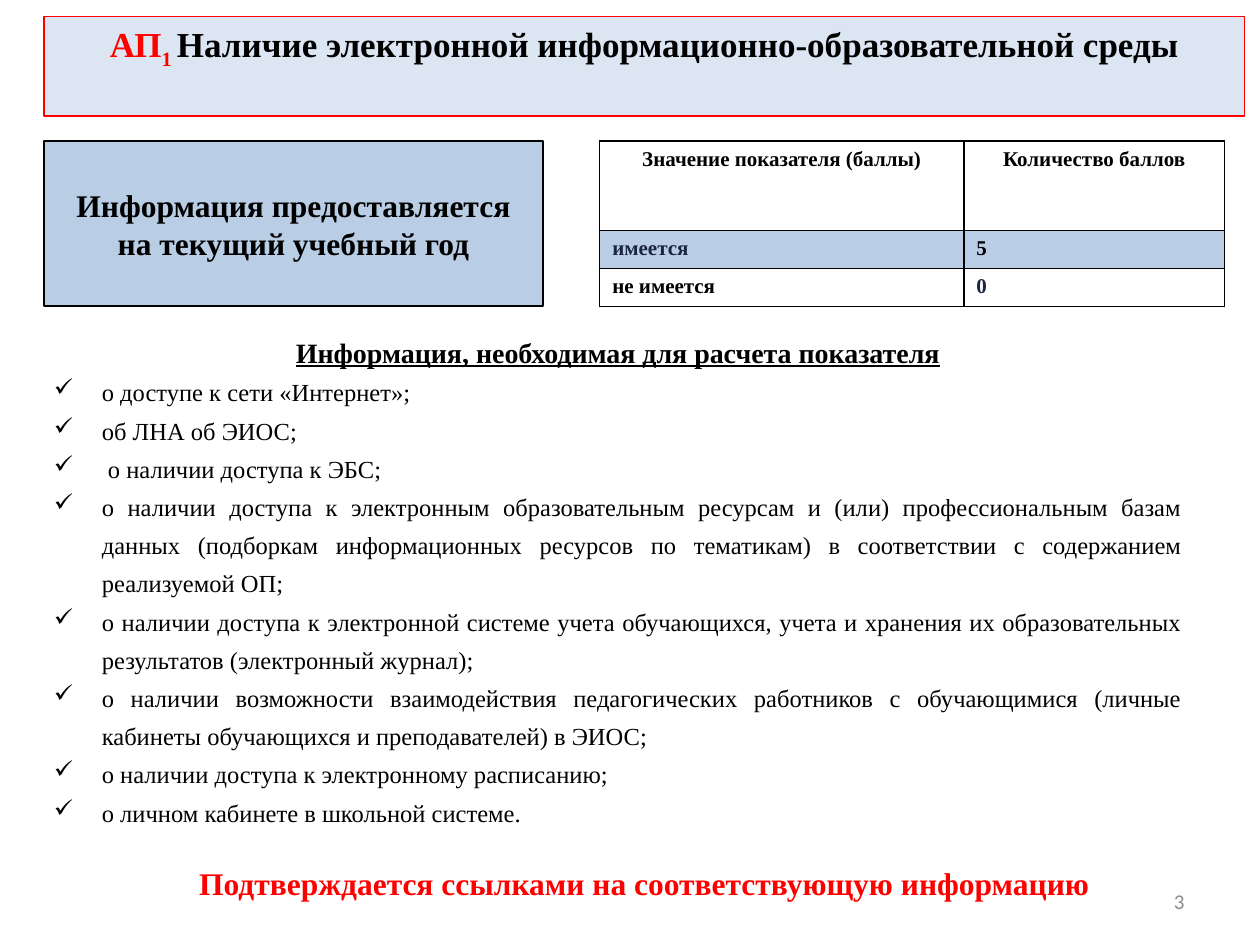
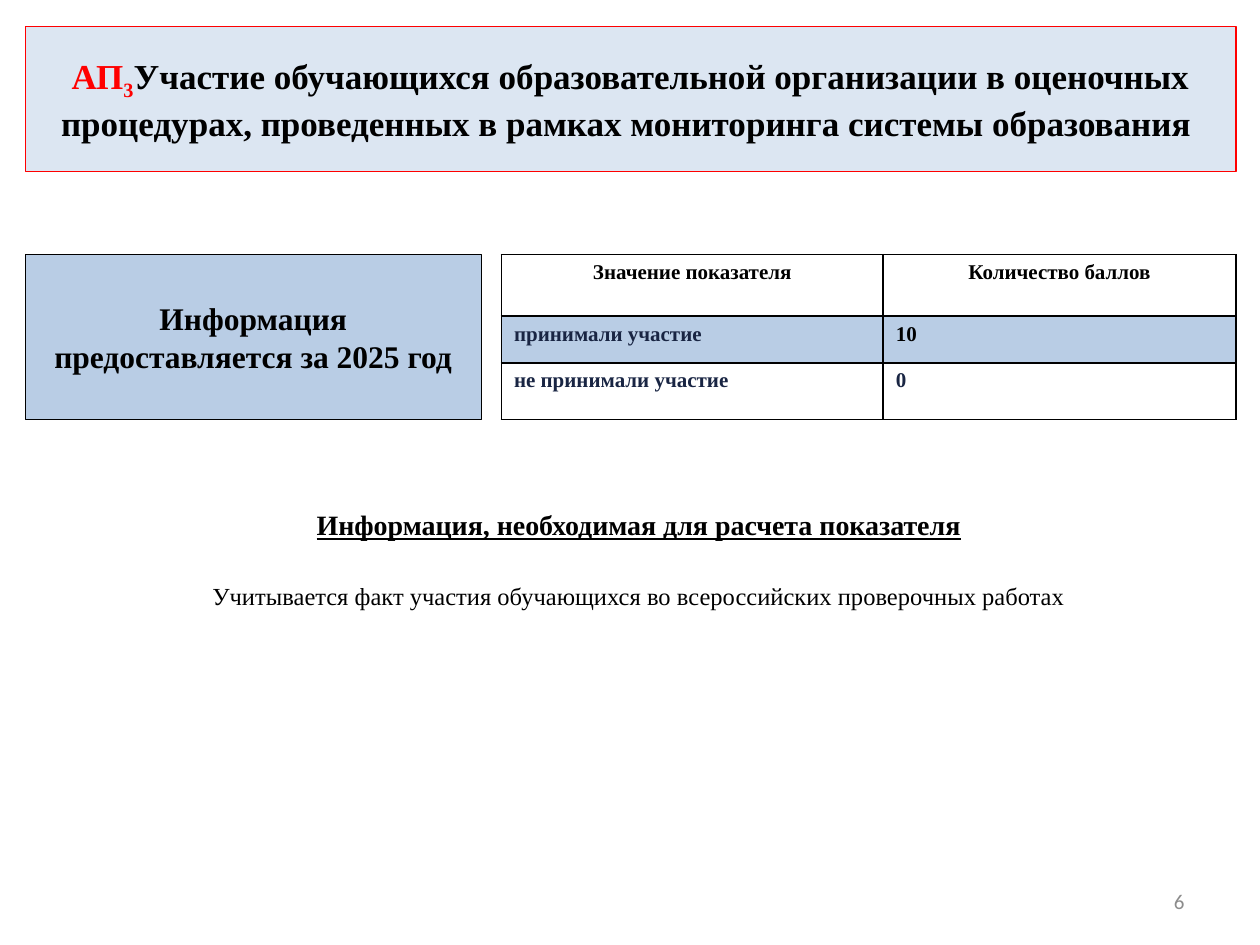
from lxml.etree import SubElement
from pptx import Presentation
from pptx.dml.color import RGBColor
from pptx.enum.shapes import MSO_SHAPE
from pptx.enum.text import MSO_ANCHOR, PP_ALIGN
from pptx.oxml.ns import qn
from pptx.util import Inches, Pt

BLACK = RGBColor(0x00, 0x00, 0x00)
WHITE = RGBColor(0xFF, 0xFF, 0xFF)
RED = RGBColor(0xFF, 0x00, 0x00)
GREY = RGBColor(0x8C, 0x8C, 0x8C)
NAVY = RGBColor(0x19, 0x25, 0x43)
BLUE = RGBColor(0xB9, 0xCD, 0xE5)
PALE = RGBColor(0xDC, 0xE6, 0xF2)
SERIF = "Times New Roman"
HEAD = "Информация, необходимая для расчета показателя"


def write(frame, text, size=14, color=BLACK, bold=False, line=False, font=SERIF,
          align=PP_ALIGN.CENTER, space=1.0, before=0, base=0, tick=False, join=False):
    para = frame.paragraphs[-1]
    if para.runs and not join:
        para = frame.add_paragraph()
    if not join:
        para.alignment = align
        para.line_spacing = space
        para.space_before = Pt(before)
    if tick:
        props = para._p.get_or_add_pPr()
        props.set("marL", str(Inches(0.38)))
        props.set("indent", str(-Inches(0.38)))
        SubElement(props, qn("a:buChar")).set("char", "✓")
    run = para.add_run()
    run.text = text
    run.font.name, run.font.size = font, Pt(size)
    run.font.bold, run.font.underline = bold, line
    run.font.color.rgb = color
    if base:
        run._r.get_or_add_rPr().set("baseline", str(base * 1000))


def box(slide, place, fill=None, edge=BLACK, anchor=MSO_ANCHOR.MIDDLE):
    area = [Inches(n) for n in place]
    if fill is None:
        shape = slide.shapes.add_textbox(*area)
    else:
        shape = slide.shapes.add_shape(MSO_SHAPE.RECTANGLE, *area)
        shape.shadow.inherit = False
        shape.fill.solid()
        shape.fill.fore_color.rgb = fill
        shape.line.color.rgb = edge
        shape.line.width = Pt(0.75)
    frame = shape.text_frame
    frame.word_wrap = True
    frame.vertical_anchor = anchor
    return frame


TOP, MID = MSO_ANCHOR.TOP, MSO_ANCHOR.MIDDLE
pages = [
    dict(num="3", sub="1 ", title="Наличие электронной информационно-образовательной среды",
         band=(0.35, 0.13, 9.53, 0.79), anchor=TOP,
         term="Информация предоставляется на текущий учебный год",
         card=(0.35, 1.12, 3.96, 1.31),
         grid=(4.76, 1.12), cols=(2.89, 2.07), rows=(0.71, 0.3, 0.3),
         cells=[("Значение показателя (баллы)", BLACK), ("Количество баллов", BLACK),
                ("имеется", NAVY), ("5", BLACK), ("не имеется", BLACK), ("0", NAVY)],
         body=(0.33, 2.61, 9.15, 4.35),
         form=dict(align=PP_ALIGN.JUSTIFY, tick=True),
         items=["о доступе к сети «Интернет»;",
                "об ЛНА об ЭИОС;",
                " о наличии доступа к ЭБС;",
                "о наличии доступа к электронным образовательным ресурсам и (или) "
                "профессиональным базам данных (подборкам информационных ресурсов "
                "по тематикам) в соответствии с содержанием реализуемой ОП;",
                "о наличии доступа к электронной системе учета обучающихся, учета "
                "и хранения их образовательных результатов (электронный журнал);",
                "о наличии возможности взаимодействия педагогических работников с "
                "обучающимися (личные кабинеты обучающихся и преподавателей) в ЭИОС;",
                "о наличии доступа к электронному расписанию;",
                "о личном кабинете в школьной системе."],
         proof="Подтверждается ссылками на соответствующую информацию"),
    dict(num="6", sub="3", title="Участие обучающихся образовательной организации в оценочных "
         "процедурах, проведенных в рамках мониторинга системы образования ",
         band=(0.2, 0.21, 9.61, 1.15), anchor=MID,
         term="Информация предоставляется за 2025 год",
         card=(0.2, 2.02, 3.62, 1.31),
         grid=(3.98, 2.02), cols=(3.03, 2.8), rows=(0.49, 0.37, 0.45),
         cells=[("Значение показателя", BLACK), ("Количество баллов", BLACK),
                ("принимали участие", NAVY), ("10", BLACK),
                ("не принимали участие", NAVY), ("0", NAVY)],
         body=(0.3, 3.98, 9.54, 0.86),
         form=dict(before=18),
         items=["Учитывается факт участия обучающихся во всероссийских проверочных работах"],
         proof=None),
]

deck = Presentation()
deck.slide_width, deck.slide_height = Inches(10), Inches(7.5)

for page in pages:
    slide = deck.slides.add_slide(deck.slide_layouts[6])

    frame = box(slide, (7.17, 6.95, 2.33, 0.4))
    write(frame, page["num"], size=12, color=GREY, font="Calibri", align=PP_ALIGN.RIGHT)

    cols, rows = page["cols"], page["rows"]
    area = [Inches(n) for n in (*page["grid"], sum(cols), sum(rows))]
    table = slide.shapes.add_table(len(rows), len(cols), *area).table
    for col, width in zip(table.columns, cols):
        col.width = Inches(width)
    for row, height in zip(table.rows, rows):
        row.height = Inches(height)
    for spot, (text, color) in enumerate(page["cells"]):
        row, col = divmod(spot, len(cols))
        cell = table.cell(row, col)
        props = cell._tc.get_or_add_tcPr()
        for side in ("lnL", "lnR", "lnT", "lnB"):
            edge = SubElement(props, qn(f"a:{side}"), w=str(Pt(1)))
            paint = SubElement(edge, qn("a:solidFill"))
            SubElement(paint, qn("a:srgbClr"), val=str(BLACK))
        cell.fill.solid()
        cell.fill.fore_color.rgb = BLUE if row == 1 else WHITE
        write(cell.text_frame, text, size=12, color=color, bold=True,
              align=PP_ALIGN.LEFT if row else PP_ALIGN.CENTER)

    frame = box(slide, page["card"], BLUE)
    write(frame, page["term"], size=18, bold=True)

    frame = box(slide, page["band"], PALE, RED, page["anchor"])
    write(frame, "АП", size=20, color=RED, bold=True)
    write(frame, page["sub"], size=20, color=RED, bold=True, base=-25, join=True)
    write(frame, page["title"], size=20, bold=True, join=True)

    frame = box(slide, page["body"], anchor=TOP)
    write(frame, HEAD, size=16, bold=True, line=True)
    for item in page["items"]:
        write(frame, item, space=1.3, **page["form"])

    if page["proof"]:
        frame = box(slide, (0.43, 6.66, 9.37, 0.5), anchor=TOP)
        write(frame, page["proof"], size=18, color=RED, bold=True, space=1.5)

deck.save("out.pptx")
